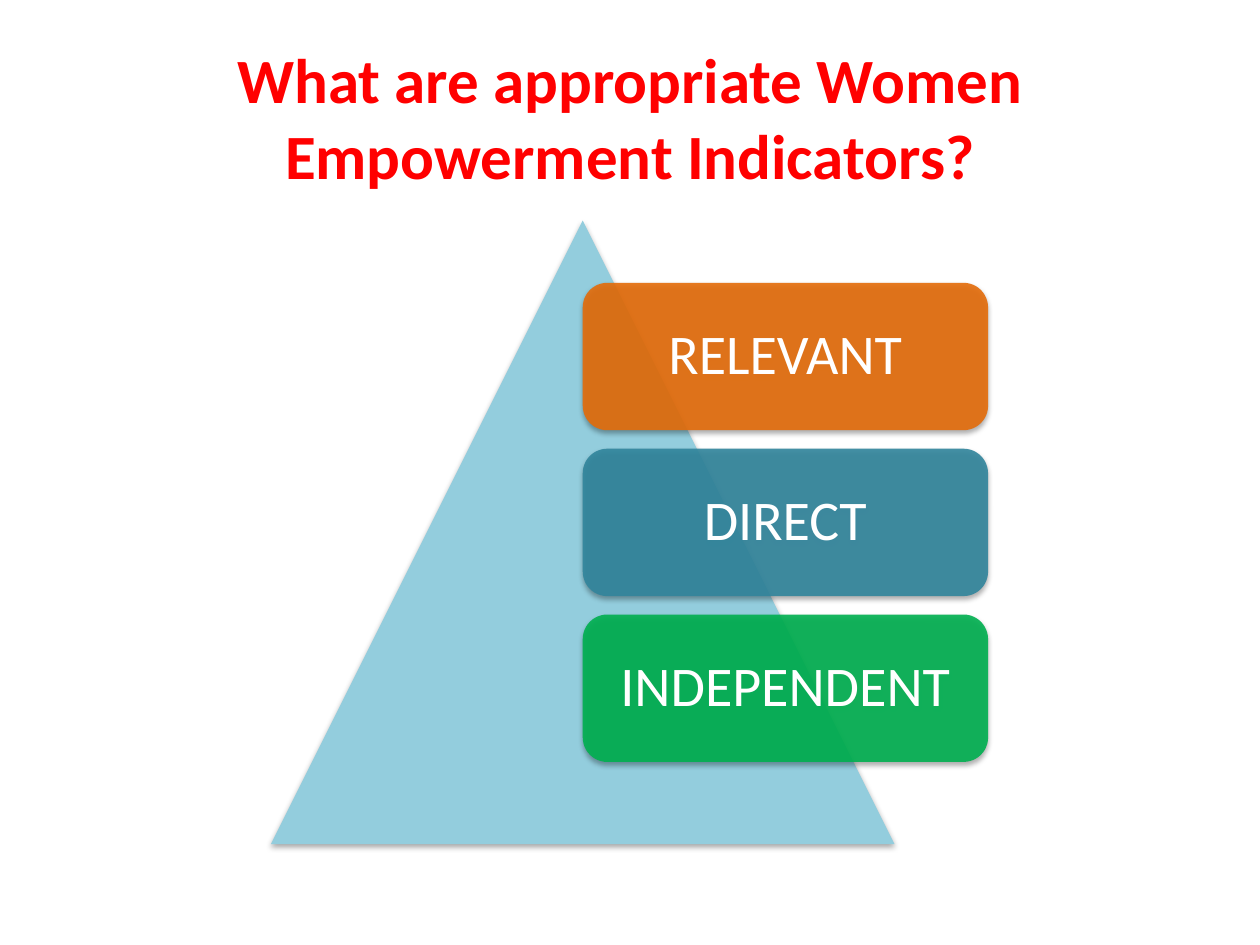
from lxml import etree
from pptx import Presentation
from pptx.dml.color import RGBColor
from pptx.enum.shapes import MSO_SHAPE
from pptx.enum.text import MSO_ANCHOR, PP_ALIGN
from pptx.oxml.ns import qn
from pptx.util import Inches, Pt

TRIANGLE = MSO_SHAPE.ISOSCELES_TRIANGLE
ROUNDED = MSO_SHAPE.ROUNDED_RECTANGLE
CENTER = PP_ALIGN.CENTER
MIDDLE = MSO_ANCHOR.MIDDLE

RED = RGBColor(0xFF, 0x00, 0x00)
WHITE = RGBColor(0xFF, 0xFF, 0xFF)
SKY = RGBColor(0x93, 0xCD, 0xDD)
ORANGE = RGBColor(0xE4, 0x6C, 0x0A)
TEAL = RGBColor(0x31, 0x85, 0x9C)
GREEN = RGBColor(0x00, 0xB0, 0x50)


def write(sp, text, size, color, bold=False, spacing=1.0, inset=0.1):
    tf = sp.text_frame
    tf.word_wrap = True
    tf.vertical_anchor = MIDDLE
    tf.margin_left = tf.margin_right = Inches(inset)
    p = tf.paragraphs[0]
    p.alignment = CENTER
    p.line_spacing = spacing
    r = p.add_run()
    r.text = text
    r.font.name = "Calibri"
    r.font.size = Pt(size)
    r.font.bold = bold
    r.font.color.rgb = color


def add_block(s, kind, left, top, width, height, color, opacity=100):
    sp = s.shapes.add_shape(kind, Inches(left), Inches(top), Inches(width), Inches(height))
    sp.fill.solid()
    sp.fill.fore_color.rgb = color
    sp.line.fill.background()
    sp.shadow.inherit = False
    spPr = sp.fill._xPr
    if opacity < 100:
        fill = spPr.find(qn("a:solidFill")).find(qn("a:srgbClr"))
        etree.SubElement(fill, qn("a:alpha"), val=str(opacity * 1000))
    shadow = etree.SubElement(
        spPr.find(qn("a:effectLst")), qn("a:outerShdw"),
        blurRad=str(Pt(3.1)), dist=str(Pt(1.8)), dir="5400000", rotWithShape="0")
    black = etree.SubElement(shadow, qn("a:srgbClr"), val="000000")
    etree.SubElement(black, qn("a:alpha"), val="35000")
    return sp


prs = Presentation()
W, H = 10, 7.5
prs.slide_width, prs.slide_height = Inches(W), Inches(H)
s = prs.slides.add_slide(prs.slide_layouts[5])

title = s.shapes.title
title.left, title.top = Inches(0.05 * W), Inches(0.04 * H)
title.width, title.height = Inches(0.9 * W), Inches(H / 6)
write(title, "What are appropriate Women Empowerment Indicators?", 36, RED, bold=True)

side = 0.66 * H
left, top = 2.15, 1.75
add_block(s, TRIANGLE, left, top, side, side, SKY)

card_left = left + side / 2
card_top = top + side / 10
card_width = 0.65 * side
card_height = 1.17
pitch = card_height * 9 / 8
cards = [("RELEVANT", ORANGE), ("DIRECT", TEAL), ("INDEPENDENT", GREEN)]
for row, (label, color) in enumerate(cards):
    sp = add_block(s, ROUNDED, card_left, card_top + row * pitch,
                   card_width, card_height, color, opacity=90)
    write(sp, label, 32, WHITE, spacing=0.9, inset=0.13)

prs.save("out.pptx")
